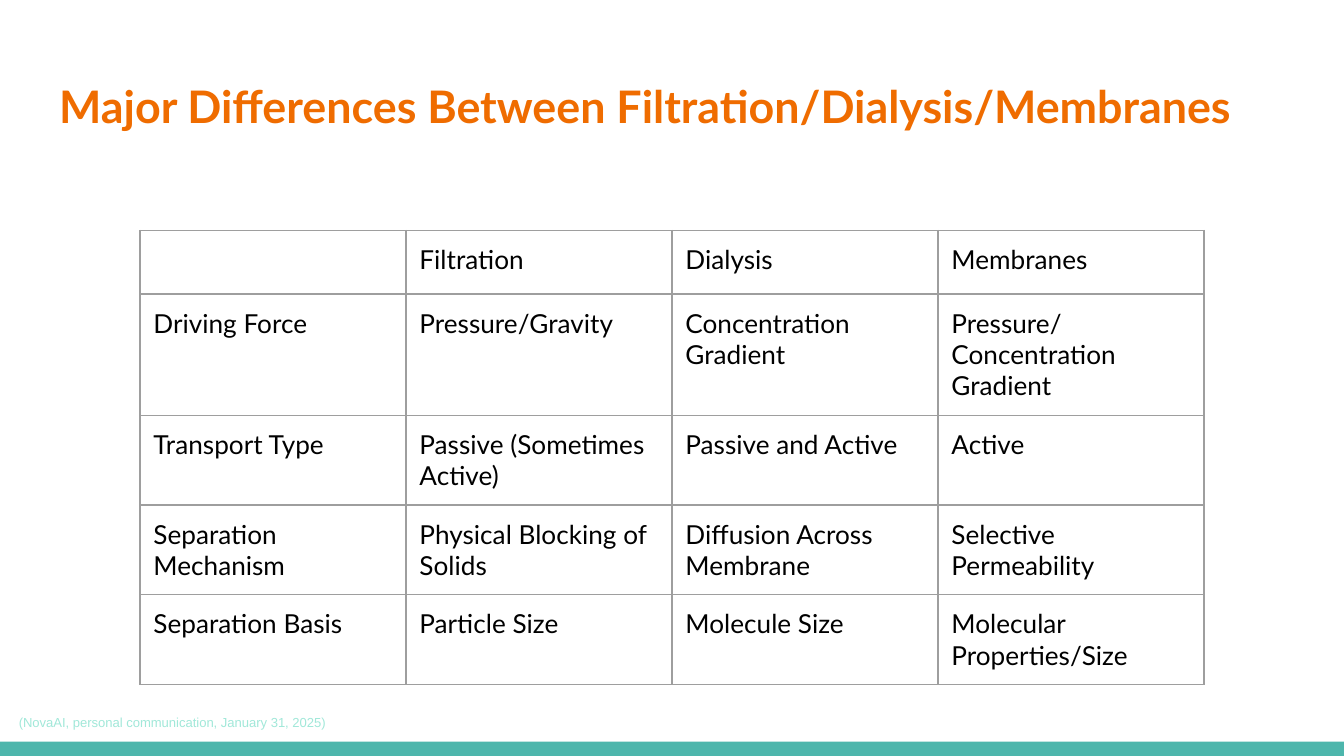
import pptx
import pptx.dml.color
import pptx.enum.shapes
import pptx.enum.text
import pptx.oxml.ns
import pptx.util
from lxml import etree

Pt = pptx.util.Pt
RGBColor = pptx.dml.color.RGBColor

TEAL = RGBColor(0x4D, 0xB6, 0xAC)
ORANGE = RGBColor(0xEF, 0x6C, 0x00)
MINT = RGBColor(0xA1, 0xE8, 0xD9)
BLACK = RGBColor(0x00, 0x00, 0x00)
GREY = RGBColor(0x9E, 0x9E, 0x9E)

INSET = Pt(7.2)
TABLE_SIZE = 14
COLUMN_WIDTH = 142.5
ROW_HEIGHTS = [34, 65, 48, 48, 48]
COMPARISON = [
    ["", "Filtration", "Dialysis", "Membranes"],
    ["Driving Force", "Pressure/Gravity", "Concentration Gradient",
     "Pressure/Concentration Gradient"],
    ["Transport Type", "Passive (Sometimes Active)", "Passive and Active", "Active"],
    ["Separation Mechanism", "Physical Blocking of Solids",
     "Diffusion Across Membrane", "Selective Permeability"],
    ["Separation Basis", "Particle Size", "Molecule Size", "Molecular Properties/Size"],
]


def set_insets(holder):
    holder.margin_left = holder.margin_right = INSET
    holder.margin_top = holder.margin_bottom = INSET


def write_text(text_frame, text, font_name, size, color, bold=False):
    text_frame.text = text
    text_frame.word_wrap = True
    para = text_frame.paragraphs[0]
    para.alignment = pptx.enum.text.PP_ALIGN.LEFT
    for span in para.runs:
        span.font.name = font_name
        span.font.size = Pt(size)
        span.font.color.rgb = color
        span.font.bold = bold


def add_child(parent, tag, **attributes):
    return etree.SubElement(parent, pptx.oxml.ns.qn(tag), **attributes)


def add_borders(cell):
    properties = cell._tc.get_or_add_tcPr()
    for side in ("a:lnL", "a:lnR", "a:lnT", "a:lnB"):
        line = add_child(properties, side, w=str(Pt(0.75)))
        fill = add_child(line, "a:solidFill")
        add_child(fill, "a:srgbClr", val=str(GREY))


def add_bottom_bar(page):
    bar = page.shapes.add_shape(
        pptx.enum.shapes.MSO_SHAPE.RECTANGLE, Pt(0), Pt(397.4), Pt(720), Pt(7.6))
    bar.shadow.inherit = False
    bar.fill.solid()
    bar.fill.fore_color.rgb = TEAL
    bar.line.fill.background()


def fill_title(page, text):
    title = page.shapes.title
    title.left, title.top, title.width, title.height = Pt(24.5), Pt(35), Pt(671), Pt(55.5)
    set_insets(title.text_frame)
    title.text_frame.vertical_anchor = pptx.enum.text.MSO_ANCHOR.TOP
    write_text(title.text_frame, text, "Lato", 24, ORANGE, bold=True)


def fill_cell(cell, text):
    set_insets(cell)
    write_text(cell.text_frame, text, "Lato", TABLE_SIZE, BLACK)
    if not text:
        # Keep the empty cell from stretching its row
        add_child(cell.text_frame.paragraphs[0]._p, "a:endParaRPr", sz=str(TABLE_SIZE * 100))
    add_borders(cell)
    cell.fill.background()


def add_comparison_table(page):
    columns = len(COMPARISON[0])
    frame = page.shapes.add_table(
        len(COMPARISON), columns, Pt(75), Pt(123.5),
        Pt(COLUMN_WIDTH * columns), Pt(sum(ROW_HEIGHTS)))
    table = frame.table
    table.first_row = table.horz_banding = False
    for column in table.columns:
        column.width = Pt(COLUMN_WIDTH)
    for row, height, texts in zip(table.rows, ROW_HEIGHTS, COMPARISON):
        row.height = Pt(height)
        for cell, text in zip(row.cells, texts):
            fill_cell(cell, text)


def add_citation(page, text):
    box = page.shapes.add_textbox(Pt(3), Pt(378.7), Pt(720), Pt(23))
    set_insets(box.text_frame)
    write_text(box.text_frame, text, "Arial", 7, MINT)


def main():
    deck = pptx.Presentation()
    deck.slide_width, deck.slide_height = Pt(720), Pt(405)
    page = deck.slides.add_slide(deck.slide_layouts[5])  # title only

    add_bottom_bar(page)
    fill_title(page, "Major Differences Between Filtration/Dialysis/Membranes")
    add_comparison_table(page)
    add_citation(page, "(NovaAI, personal communication, January 31, 2025)")

    deck.save("out.pptx")


if __name__ == "__main__":
    main()
